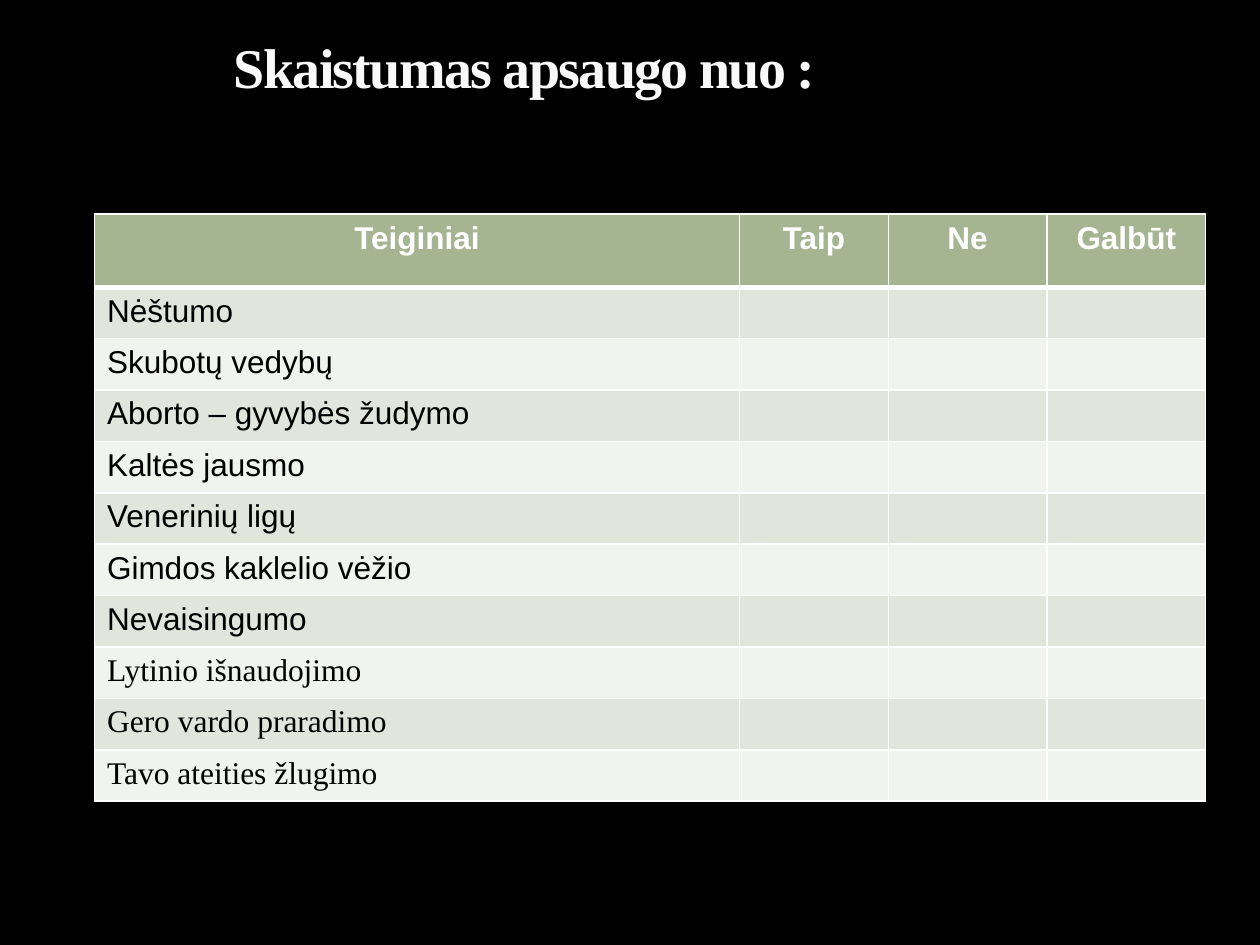
from lxml import etree
from pptx import Presentation
from pptx.dml.color import RGBColor
from pptx.enum.text import MSO_ANCHOR, PP_ALIGN
from pptx.oxml.ns import qn
from pptx.util import Inches, Pt

CENTER, LEFT, BOTTOM = PP_ALIGN.CENTER, PP_ALIGN.LEFT, MSO_ANCHOR.BOTTOM
SANS, SERIF = "Arial", "Times New Roman"
COLORS = {
    "background": "000000",
    "title": "F9F9F9",
    "header": "A5B592",
    "header_text": "FFFFFF",
    "body_text": "000000",
    "odd": "E1E5DC",
    "even": "F0F3EE",
    "border": "FFFFFF",
}
HEADINGS = ["Teiginiai", "Taip", "Ne", "Galbūt"]
SANS_CLAIMS = [
    "Nėštumo",
    "Skubotų vedybų",
    "Aborto – gyvybės žudymo",
    "Kaltės jausmo",
    "Venerinių ligų",
    "Gimdos kaklelio vėžio",
    "Nevaisingumo",
]
SERIF_CLAIMS = ["Lytinio išnaudojimo", "Gero vardo praradimo", "Tavo ateities žlugimo"]
COLUMN_WIDTHS = [5.12, 1.18, 1.26, 1.26]
TABLE_HEIGHT, HEADER_HEIGHT = 4.66, 0.58


class SlideBuilder:
    """Holds the colours and the current slide, and adds styled elements to it."""

    def __init__(self, slide, colors):
        self.slide = slide
        self.colors = colors
        self.paint(slide.background.fill, "background")

    def paint(self, fill, color):
        fill.solid()
        fill.fore_color.rgb = RGBColor.from_string(self.colors[color])

    def set_text(self, frame, text, size, font, color, bold=False, align=LEFT):
        frame.text = text
        paragraph = frame.paragraphs[0]
        paragraph.alignment = align
        paragraph.font.size = Pt(size)
        for run in paragraph.runs:
            run.font.size = Pt(size)
            run.font.name = font
            run.font.bold = bold
            run.font.color.rgb = RGBColor.from_string(self.colors[color])

    def title(self, text, left, top, width, height):
        box = self.slide.shapes.add_textbox(*map(Inches, (left, top, width, height)))
        frame = box.text_frame
        frame.word_wrap = True
        frame.vertical_anchor = BOTTOM
        self.set_text(frame, text, 32, SERIF, "title", True, CENTER)
        frame.paragraphs[0].runs[0]._r.get_or_add_rPr().set("spc", "-100")

    def borders(self, cell, top, bottom):
        properties = cell._tc.get_or_add_tcPr()
        for side, width in (("L", 1), ("R", 1), ("T", top), ("B", bottom)):
            line = etree.SubElement(properties, qn(f"a:ln{side}"), w=str(Pt(width)))
            fill = etree.SubElement(line, qn("a:solidFill"))
            etree.SubElement(fill, qn("a:srgbClr"), val=self.colors["border"])

    def table(self, left, top, widths, height, header_height, headings, claims):
        row_count = len(claims) + 1
        table = self.slide.shapes.add_table(
            row_count, len(widths), Inches(left), Inches(top),
            Inches(sum(widths)), Inches(height),
        ).table
        for column, width in zip(table.columns, widths):
            column.width = Inches(width)
        for row in table.rows:
            row.height = Inches((height - header_height) / len(claims))
        table.rows[0].height = Inches(header_height)

        for index, heading in enumerate(headings):
            cell = table.cell(0, index)
            self.borders(cell, 1, 3)
            self.paint(cell.fill, "header")
            self.set_text(cell.text_frame, heading, 18, SANS, "header_text", True, CENTER)
        for row, (claim, font) in enumerate(claims, 1):
            for index in range(len(widths)):
                cell = table.cell(row, index)
                self.borders(cell, 3 if row == 1 else 1, 1)
                self.paint(cell.fill, "odd" if row % 2 else "even")
                text = claim if index == 0 else ""
                self.set_text(cell.text_frame, text, 18, font, "body_text")


def main():
    presentation = Presentation()
    presentation.slide_width = Inches(10)
    presentation.slide_height = Inches(7.5)
    slide = presentation.slides.add_slide(presentation.slide_layouts[6])
    builder = SlideBuilder(slide, COLORS)
    builder.title("Skaistumas apsaugo nuo :", 0.5, 0.17, 7.33, 0.67)
    claims = [(claim, SANS) for claim in SANS_CLAIMS]
    claims += [(claim, SERIF) for claim in SERIF_CLAIMS]
    builder.table(0.75, 1.7, COLUMN_WIDTHS, TABLE_HEIGHT, HEADER_HEIGHT, HEADINGS, claims)
    presentation.save("out.pptx")


if __name__ == "__main__":
    main()
